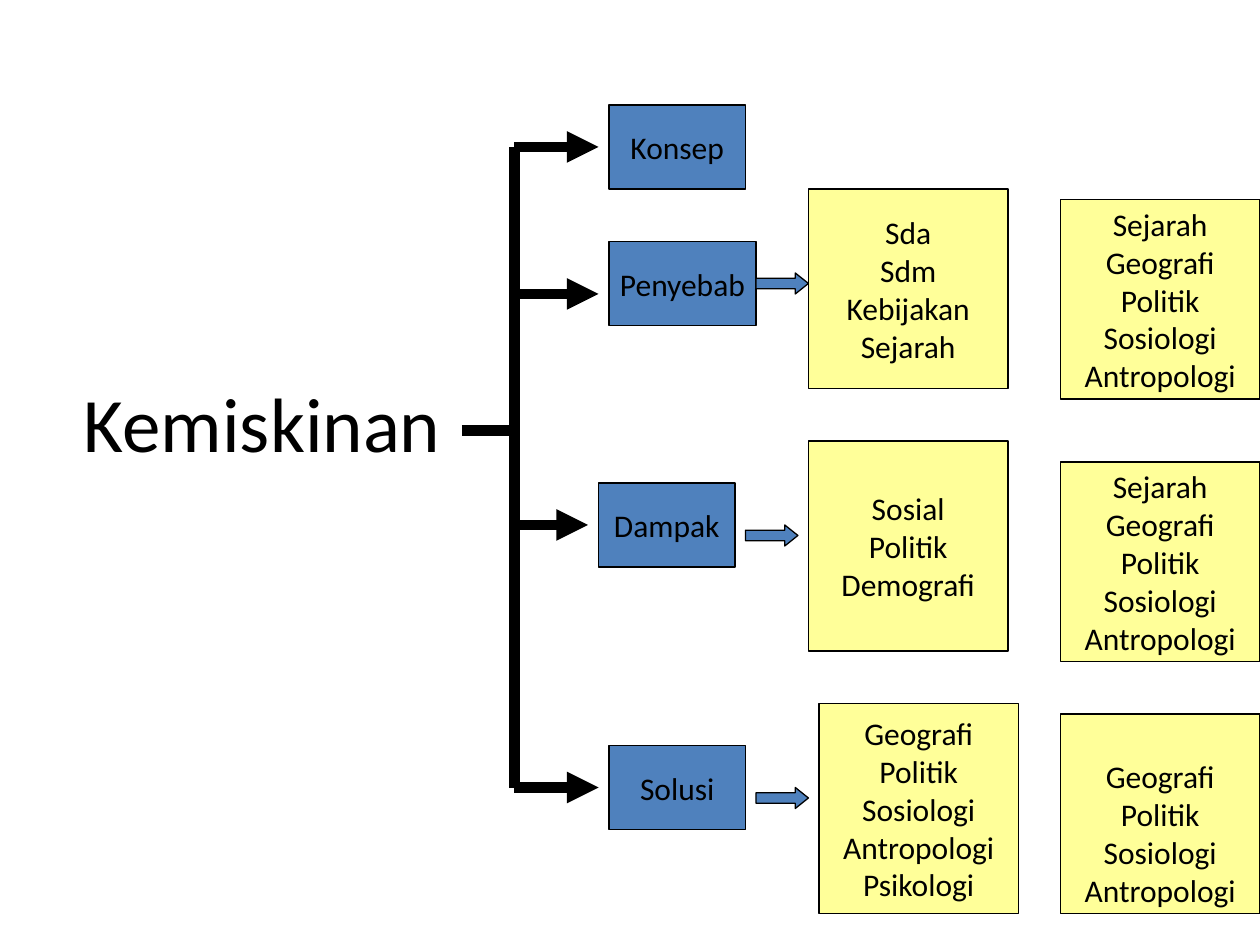
from lxml.etree import SubElement
from pptx import Presentation
from pptx.dml.color import RGBColor
from pptx.enum.shapes import MSO_CONNECTOR as CONN, MSO_SHAPE as SHAPE
from pptx.enum.text import MSO_ANCHOR as ANCHOR, PP_ALIGN as ALIGN
from pptx.oxml.ns import qn
from pptx.util import Emu, Pt

PX = 9525
COLORS = {"ink": "000000", "topic": "4F81BD", "detail": "FFFF99"}
FIELDS = ["Sejarah", "Geografi", "Politik", "Sosiologi", "Antropologi"]

TITLE = {"text": "Kemiskinan", "box": (0, 264, 400, 114)}
BRACKET = {"box": (352, 112, 104, 488), "trunk": 40, "stub": 216,
           "arms": [(0, 104), (112, 104), (288, 96), (488, 104)]}
TOPICS = [
    {"text": "Konsep", "box": (464, 80, 104, 64)},
    {"text": "Penyebab", "box": (464, 184, 112, 64), "arrow": (112, 24)},
    {"text": "Dampak", "box": (456, 368, 104, 64), "arrow": (112, 32)},
    {"text": "Solusi", "box": (464, 568, 104, 64), "arrow": (112, 32)},
]
DETAILS = [
    {"lines": ["Sda", "Sdm", "Kebijakan", "Sejarah"], "box": (616, 144, 152, 152)},
    {"lines": ["Sosial", "Politik", "Demografi"], "box": (616, 336, 152, 160)},
    {"lines": FIELDS[1:] + ["Psikologi"], "box": (624, 536, 152, 160)},
    {"lines": FIELDS, "box": (808, 152, 152, 152)},
    {"lines": FIELDS, "box": (808, 352, 152, 152)},
    {"lines": FIELDS[1:], "box": (808, 544, 152, 152), "inset": 34},
]


def px(*values):
    """Turn pixel lengths into EMU."""
    return [Emu(v * PX) for v in values]


def color(name):
    """Look up a named colour."""
    return RGBColor.from_string(COLORS[name])


def write(tf, lines, size, **frame):
    """Write centred lines into a text frame."""
    for key, value in {"vertical_anchor": ANCHOR.MIDDLE, **frame}.items():
        setattr(tf, key, value)
    for i, line in enumerate(lines):
        p = tf.paragraphs[0] if i == 0 else tf.add_paragraph()
        p.alignment = ALIGN.CENTER
        r = p.add_run()
        r.text = line
        for key, value in {"size": Pt(size), "name": "Calibri"}.items():
            setattr(r.font, key, value)
        r.font.color.rgb = color("ink")


def add_shape(s, kind, box, fill):
    """Add a filled shape with a thin outline."""
    sp = s.shapes.add_shape(kind, *px(*box))
    sp.shadow.inherit = False
    sp.fill.solid()
    sp.fill.fore_color.rgb = color(fill)
    sp.line.color.rgb = color("ink")
    sp.line.width = Pt(0.75)
    return sp


def add_title(s, text, box):
    """Place the main theme."""
    sp = s.shapes.add_textbox(*px(*box))
    write(sp.text_frame, [text], 44, word_wrap=True)


def add_line(group, start, end, head=False):
    """Draw one heavy line, with an arrowhead if asked."""
    line = group.shapes.add_connector(CONN.STRAIGHT, *px(*start, *end))
    line.line.color.rgb = color("ink")
    line.line.width = Pt(6)
    if head:
        SubElement(line.line._get_or_add_ln(), qn("a:tailEnd"), type="triangle")
    SubElement(line._element.spPr, qn("a:effectLst"))


def add_bracket(s, box, trunk, stub, arms):
    """Draw the trunk, its stub and the arms that point at the topics."""
    x, y, _, h = box
    group = s.shapes.add_group_shape()
    add_line(group, (x + trunk, y), (x + trunk, y + h))
    add_line(group, (x, y + stub), (x + trunk, y + stub))
    for dy, reach in arms:
        add_line(group, (x + trunk, y + dy), (x + reach, y + dy), head=True)


def add_topic(s, text, box, arrow=None):
    """Place a topic box and the block arrow beside it."""
    sp = add_shape(s, SHAPE.RECTANGLE, box, "topic")
    write(sp.text_frame, [text], 18, word_wrap=False)
    if arrow:
        x, y = box[0] + arrow[0], box[1] + arrow[1]
        sp = add_shape(s, SHAPE.RIGHT_ARROW, (x, y, 40, 16), "topic")
        sp.adjustments[1] = 0.625


def add_detail(s, lines, box, inset=5):
    """Place a list box."""
    sp = add_shape(s, SHAPE.RECTANGLE, box, "detail")
    write(sp.text_frame, lines, 18, word_wrap=False, margin_top=px(inset)[0])


def main():
    """Build the slide."""
    prs = Presentation()
    prs.slide_width, prs.slide_height = px(960, 720)
    s = prs.slides.add_slide(prs.slide_layouts[6])
    add_title(s, **TITLE)
    add_bracket(s, **BRACKET)
    for topic in TOPICS:
        add_topic(s, **topic)
    for detail in DETAILS:
        add_detail(s, **detail)
    prs.save("out.pptx")


if __name__ == "__main__":
    main()
